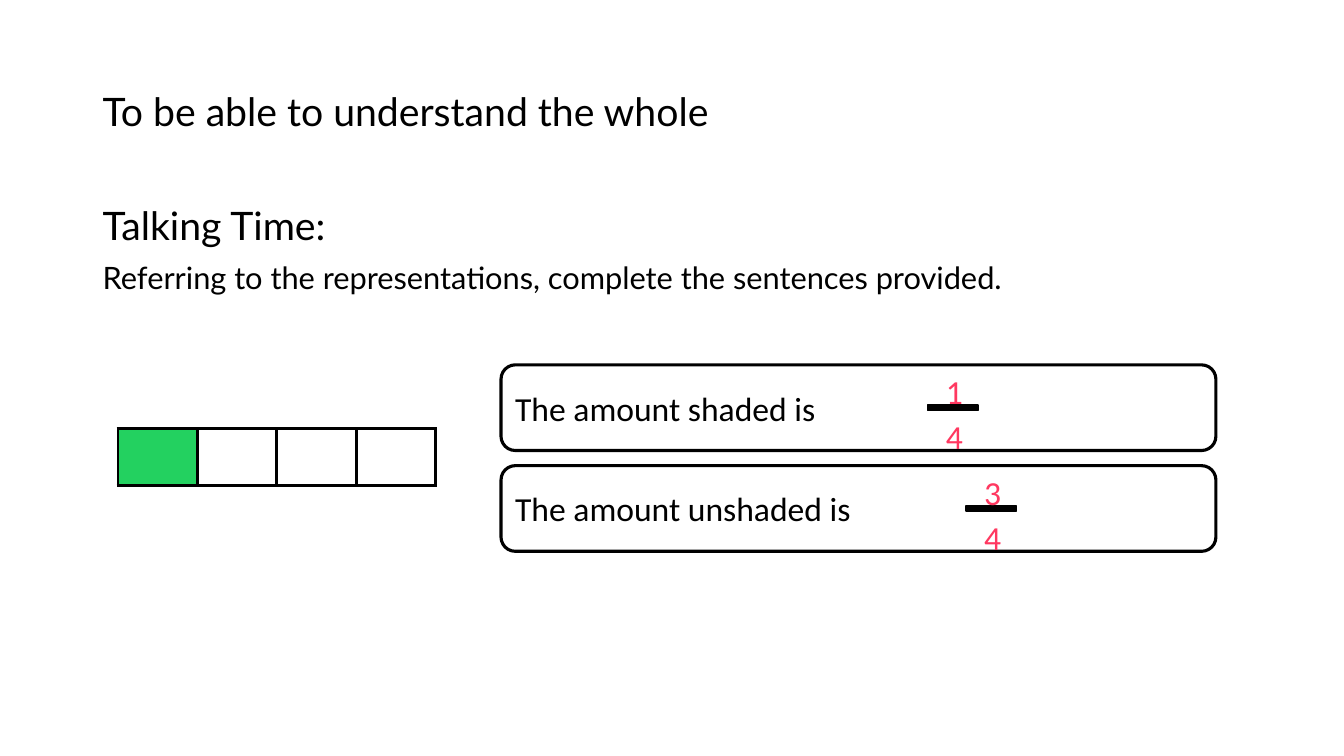
from dataclasses import dataclass

import lxml.etree
import pptx
import pptx.dml.color
import pptx.enum.shapes
import pptx.enum.text
import pptx.oxml.ns
import pptx.util

ALIGN = pptx.enum.text.PP_ALIGN
ANCHOR = pptx.enum.text.MSO_ANCHOR
SHAPE = pptx.enum.shapes.MSO_SHAPE


@dataclass(frozen=True)
class Theme:
    ink: str = "000000"
    paper: str = "FFFFFF"
    shaded: str = "23D160"
    answer: str = "FF3860"
    heading_font: str = "Lato"
    sentence_font: str = "Calibri"
    heading: float = 28
    instruction: float = 22
    sentence: float = 24
    outline: float = 2.25
    bar_outline: float = 1


def rgb(value):
    return pptx.dml.color.RGBColor.from_string(value)


def write(p, text, font, size, color, align=ALIGN.LEFT, spacing=None, before=0):
    p.alignment = align
    p.line_spacing = spacing
    p.space_before = pptx.util.Pt(before)
    r = p.add_run()
    r.text = text
    r.font.name = font
    r.font.size = pptx.util.Pt(size)
    r.font.color.rgb = rgb(color)


class Deck:
    def __init__(self, theme):
        self.theme = theme
        self.prs = pptx.Presentation()
        self.prs.slide_width = pptx.util.Inches(13.33)
        self.prs.slide_height = pptx.util.Inches(7.5)
        self.s = self.prs.slides.add_slide(self.prs.slide_layouts[6])

    def place(self, x, y, w, h):
        sw, sh = self.prs.slide_width, self.prs.slide_height
        return [round(v * side / 100) for v, side in ((x, sw), (y, sh), (w, sw), (h, sh))]

    def text(self, box, lines, anchor=ANCHOR.TOP, wrap=True):
        tf = self.s.shapes.add_textbox(*self.place(*box)).text_frame
        tf.word_wrap = wrap
        tf.vertical_anchor = anchor
        for i, line in enumerate(lines):
            p = tf.add_paragraph() if i else tf.paragraphs[0]
            write(p, **line)

    def shape(self, kind, box, fill, width):
        sp = self.s.shapes.add_shape(kind, *self.place(*box))
        sp.shadow.inherit = False
        sp.fill.solid()
        sp.fill.fore_color.rgb = rgb(fill)
        sp.line.color.rgb = rgb(self.theme.ink)
        sp.line.width = pptx.util.Pt(width)
        return sp

    def sentence(self, box, text):
        t = self.theme
        tf = self.shape(SHAPE.ROUNDED_RECTANGLE, box, t.paper, t.outline).text_frame
        tf.word_wrap = True
        tf.vertical_anchor = ANCHOR.MIDDLE
        write(tf.paragraphs[0], text, t.sentence_font, t.sentence, t.ink)

    def fraction(self, center, top, numerator, denominator):
        t = self.theme
        self.shape(SHAPE.RECTANGLE, (center - 1.87, top + 5.33, 3.75, 0.67), t.ink, t.bar_outline)
        for digit, drop in ((numerator, 0.13), (denominator, 6.13)):
            line = dict(text=digit, font=t.sentence_font, size=t.sentence,
                        color=t.answer, align=ALIGN.CENTER)
            self.text((center - 1.5, top + drop, 3.23, 6.67), [line], wrap=False)

    def bar_model(self, box, parts, shaded):
        t = self.theme
        table = self.s.shapes.add_table(1, parts, *self.place(*box)).table
        table.first_row = table.horz_banding = False
        for i in range(parts):
            cell = table.cell(0, i)
            self.borders(cell)
            cell.fill.solid()
            cell.fill.fore_color.rgb = rgb(t.shaded if i < shaded else t.paper)

    def borders(self, cell):
        qn = pptx.oxml.ns.qn
        props = cell._tc.get_or_add_tcPr()
        for side in ("a:lnL", "a:lnR", "a:lnT", "a:lnB"):
            ln = lxml.etree.SubElement(props, qn(side), w=str(pptx.util.Pt(self.theme.outline)))
            fill = lxml.etree.SubElement(ln, qn("a:solidFill"))
            lxml.etree.SubElement(fill, qn("a:srgbClr"), val=self.theme.ink)


def main():
    t = Theme()
    deck = Deck(t)
    style = dict(font=t.heading_font, color=t.ink, spacing=0.9)
    deck.text((6.9, 5.33, 72, 19.33),
              [dict(text="To be able to understand the whole", size=t.heading, **style)],
              anchor=ANCHOR.MIDDLE)
    deck.text((6.9, 26.67, 86.27, 63.47), [
        dict(text="Talking Time:", size=t.heading, **style),
        dict(text="Referring to the representations, complete the sentences provided.",
             size=t.instruction, before=10, **style),
    ])
    deck.bar_model((8.78, 56.67, 23.63, 7.6), parts=4, shaded=1)
    answers = (
        ("The amount shaded is", 70.89, "1", "4"),
        ("The amount unshaded is", 73.74, "3", "4"),
    )
    for i, (text, center, numerator, denominator) in enumerate(answers):
        top = 48.27 + 13.33 * i
        deck.sentence((37.28, top, 53.19, 11.33), text)
        deck.fraction(center, top, numerator, denominator)
    deck.prs.save("out.pptx")


if __name__ == "__main__":
    main()
